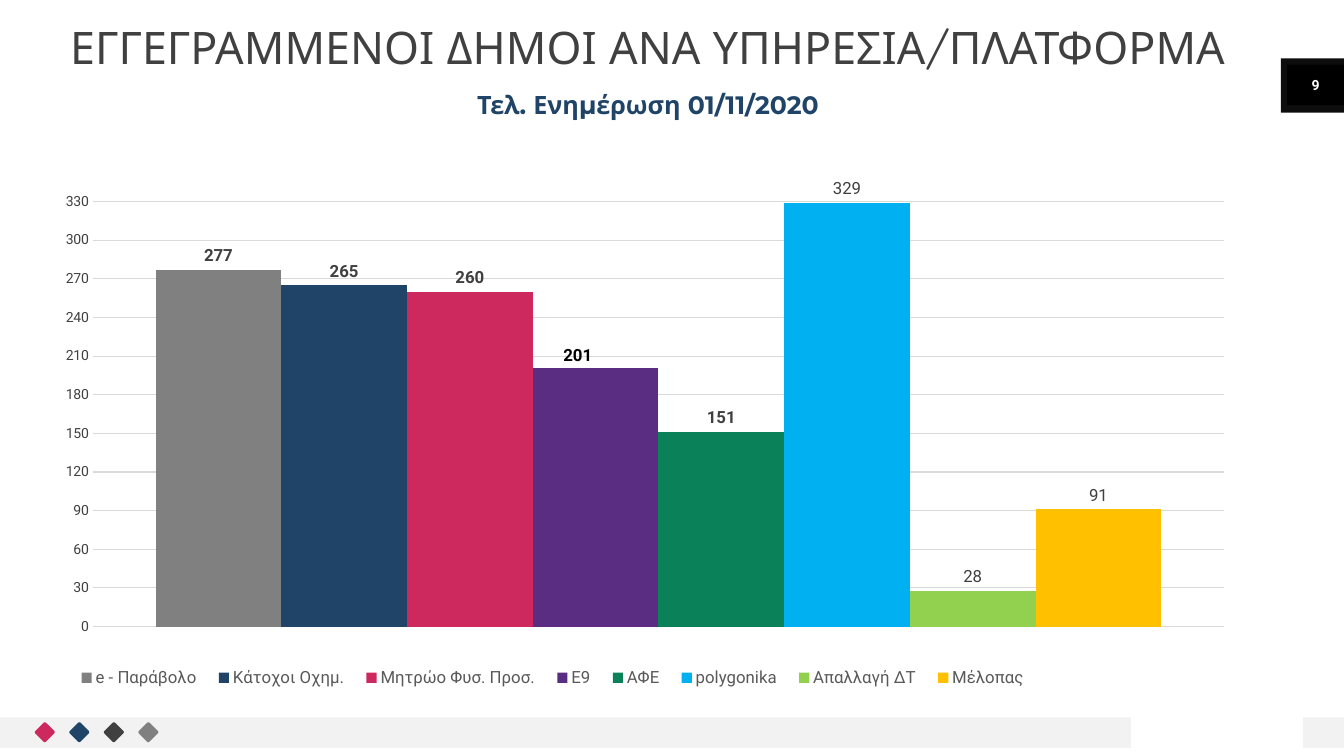
from dataclasses import dataclass

from lxml import etree
from pptx import Presentation
from pptx import util as u
from pptx.chart import data
from pptx.dml import color
from pptx.enum import chart as ce
from pptx.enum import shapes, text
from pptx.oxml import ns


@dataclass(frozen=True)
class Theme:
    gray: str = "808080"
    navy: str = "204468"
    pink: str = "CE295E"
    purple: str = "5A2D82"
    green: str = "0B815A"
    blue: str = "00B0F0"
    lime: str = "92D050"
    amber: str = "FFC000"
    dark: str = "404040"
    legend: str = "595959"
    grid: str = "D9D9D9"
    footer: str = "F2F2F2"
    tab: str = "0D0D0D"
    black: str = "000000"
    white: str = "FFFFFF"
    title_size: int = 32
    subtitle_size: int = 18
    label_size: int = 12
    small_size: int = 10
    title_font: str = "Quicksand"
    subtitle_font: str = "Montserrat"
    body_font: str = "Roboto"


t = Theme()


def style(font, size, rgb, name=t.body_font, bold=False):
    font.size = u.Pt(size)
    font.color.rgb = color.RGBColor.from_string(rgb)
    font.name = name
    font.bold = bold


def place(parent, index, **values):
    for old in parent.findall(ns.qn("c:layout")):
        parent.remove(old)
    layout = etree.Element(ns.qn("c:layout"))
    manual = etree.SubElement(layout, ns.qn("c:manualLayout"))
    for tag, value in values.items():
        etree.SubElement(manual, ns.qn("c:" + tag)).set("val", str(value))
    parent.insert(index, layout)


prs = Presentation()
prs.slide_width, prs.slide_height = u.Cm(33.87), u.Cm(19.05)
s = prs.slides.add_slide(prs.slide_layouts[6])

blocks = [
    (0, 18.08, 28.5, 0.77, t.footer),
    (32.28, 1.47, 1.59, 1.37, t.tab),
    (32.84, 18.08, 1.03, 0.77, t.footer),
    (32.44, 1.63, 1.43, 1.02, t.black),
]
for left, top, width, height, fill in blocks:
    sp = s.shapes.add_shape(shapes.MSO_SHAPE.RECTANGLE, u.Cm(left), u.Cm(top), u.Cm(width), u.Cm(height))
    sp.shadow.inherit = False
    sp.fill.solid()
    sp.fill.fore_color.rgb = color.RGBColor.from_string(fill)
    sp.line.fill.background()

tf = sp.text_frame
tf.vertical_anchor = text.MSO_ANCHOR.MIDDLE
p = tf.paragraphs[0]
p.alignment = text.PP_ALIGN.CENTER
r = p.add_run()
r.text = "9"
style(r.font, t.small_size, t.white, bold=True)

for i, fill in enumerate([t.pink, t.navy, t.dark, t.gray]):
    sp = s.shapes.add_shape(
        shapes.MSO_SHAPE.ROUNDED_RECTANGLE, u.Cm(0.94 + 0.87 * i), u.Cm(18.26), u.Cm(0.38), u.Cm(0.38))
    sp.adjustments[0] = 0.11
    sp.rotation = 315
    sp.shadow.inherit = False
    sp.fill.solid()
    sp.fill.fore_color.rgb = color.RGBColor.from_string(fill)
    sp.line.fill.background()

services = [
    ("e - Παράβολο", 277, t.gray, True),
    ("Κάτοχοι Οχημ.", 265, t.navy, True),
    ("Μητρώο Φυσ. Προσ.", 260, t.pink, True),
    ("Ε9", 201, t.purple, True),
    ("ΑΦΕ", 151, t.green, True),
    ("polygonika", 329, t.blue, False),
    ("Απαλλαγή ΔΤ", 28, t.lime, False),
    ("Μέλοπας", 91, t.amber, False),
]
cd = data.CategoryChartData(number_format="#,##0")
cd.categories = ["1"]
for name, value, fill, bold in services:
    cd.add_series(name, [value])
chart = s.shapes.add_chart(
    ce.XL_CHART_TYPE.COLUMN_CLUSTERED, u.Cm(1.22), u.Cm(3.28), u.Cm(31.93), u.Cm(14.45), cd).chart
style(chart.font, t.small_size, t.black)
chart.has_title = False
plot = chart.plots[0]
plot.vary_by_categories = False
plot.gap_width = 100
plot.overlap = 0
place(chart.element.find(".//" + ns.qn("c:plotArea")), 0,
      layoutTarget="inner", xMode="edge", yMode="edge", x=0.035, y=0.12, w=0.893, h=0.746)

for series, (name, value, fill, bold) in zip(plot.series, services):
    series.format.fill.solid()
    series.format.fill.fore_color.rgb = color.RGBColor.from_string(fill)
    labels = series.data_labels
    labels.show_value = True
    labels.number_format = "#,##0"
    labels.number_format_is_linked = False
    labels.position = ce.XL_LABEL_POSITION.OUTSIDE_END
    style(labels.font, t.label_size, t.dark, bold=bold)

e9 = plot.series[3]
label = e9.points[0].data_label
style(label.font, t.label_size, t.black, bold=True)
label.position = ce.XL_LABEL_POSITION.OUTSIDE_END
place(e9.data_labels._element.find(ns.qn("c:dLbl")), 1, x=-0.014, y=0.004)

chart.category_axis.visible = False
axis = chart.value_axis
axis.minimum_scale, axis.maximum_scale, axis.major_unit = 0, 332, 30
axis.major_tick_mark = axis.minor_tick_mark = ce.XL_TICK_MARK.NONE
axis.tick_labels.number_format = "#,##0"
axis.tick_labels.number_format_is_linked = False
style(axis.tick_labels.font, t.small_size, t.dark)
axis.format.line.fill.background()
axis.has_major_gridlines = True
grid = axis.major_gridlines.format.line
grid.width = u.Pt(0.75)
grid.color.rgb = color.RGBColor.from_string(t.grid)

chart.has_legend = True
legend = chart.legend
legend.position = ce.XL_LEGEND_POSITION.TOP
legend.include_in_layout = False
style(legend.font, t.label_size, t.legend)
place(legend._element, 1, xMode="edge", yMode="edge", x=0.013, y=0.92, w=0.77, h=0.07)

headings = [
    ("ΕΓΓΕΓΡΑΜΜΕΝΟΙ ΔΗΜΟΙ ΑΝΑ ΥΠΗΡΕΣΙΑ/ΠΛΑΤΦΟΡΜΑ", (0.71, 0.66, 31.24, 1.22),
     (t.title_size, t.dark, t.title_font, False), 0, 0.9),
    ("Τελ. Ενημέρωση 01/11/2020", (11.2, 2.11, 10.26, 1.02),
     (t.subtitle_size, t.navy, t.subtitle_font, True), 0.13, 1),
]
for words, box, look, inset, spacing in headings:
    tf = s.shapes.add_textbox(*[u.Cm(v) for v in box]).text_frame
    tf.word_wrap = True
    tf.auto_size = text.MSO_AUTO_SIZE.SHAPE_TO_FIT_TEXT
    tf.margin_left = tf.margin_right = u.Cm(inset * 2)
    tf.margin_top = tf.margin_bottom = u.Cm(inset)
    p = tf.paragraphs[0]
    p.alignment = text.PP_ALIGN.CENTER
    p.line_spacing = spacing
    r = p.add_run()
    r.text = words
    style(r.font, *look)

prs.save("out.pptx")
